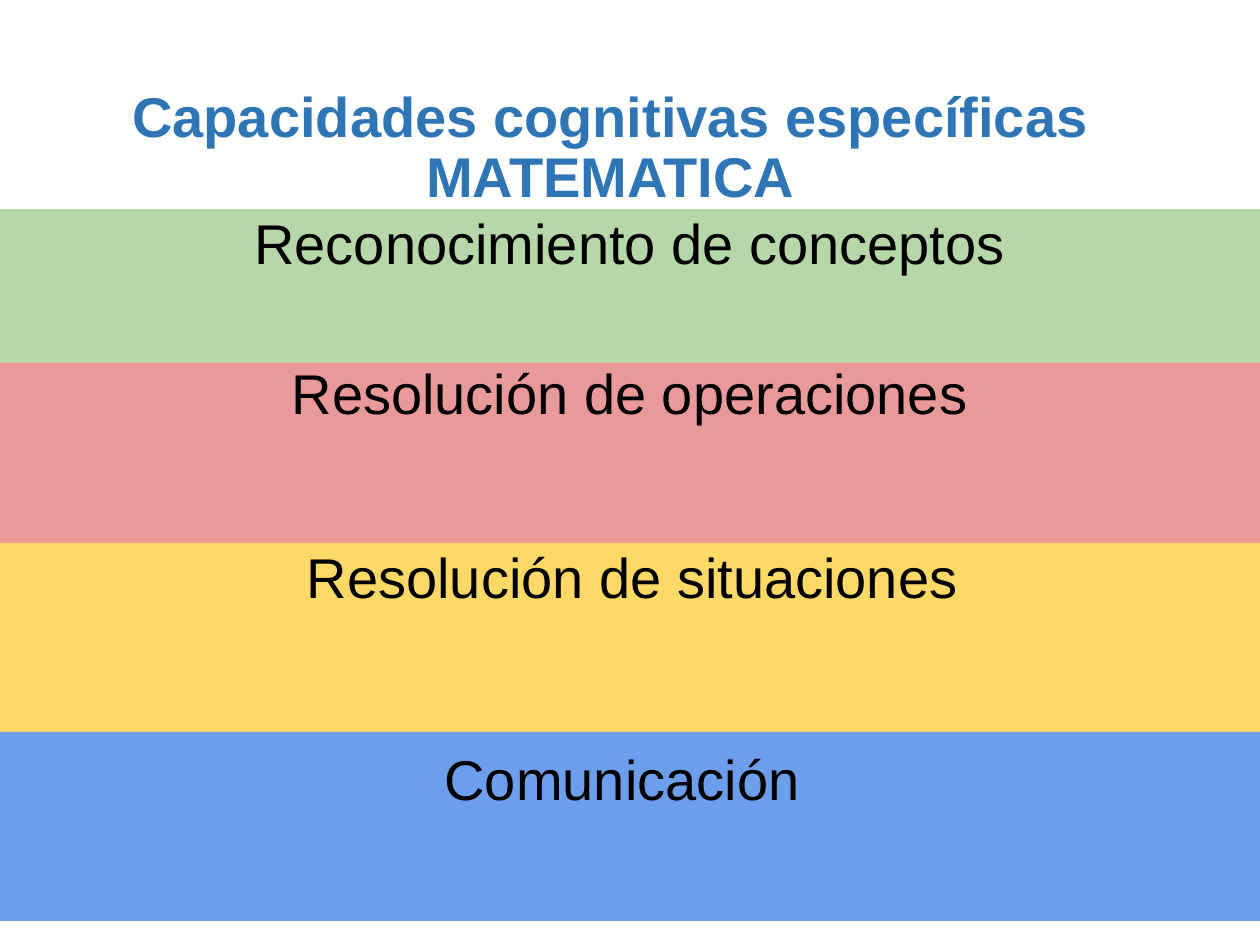
from pptx import Presentation
from pptx.dml.color import RGBColor
from pptx.enum.shapes import MSO_SHAPE
from pptx.enum.text import MSO_ANCHOR, PP_ALIGN
from pptx.util import Pt

RECTANGLE = MSO_SHAPE.RECTANGLE
TOP, MIDDLE = MSO_ANCHOR.TOP, MSO_ANCHOR.MIDDLE
CENTER = PP_ALIGN.CENTER

COLORS = {
    "title": "2E75B6",
    "text": "000000",
    "green": "B6D7A8",
    "red": "EA9999",
    "yellow": "FFD966",
    "blue": "6D9EEB",
}


def write_text(shape, text, color="text", bold=False, anchor=TOP,
               inset=7.2, line_spacing=1.0, space_before=0):
    frame = shape.text_frame
    frame.word_wrap = True
    frame.vertical_anchor = anchor
    frame.margin_left = frame.margin_right = Pt(7.2)
    frame.margin_top = frame.margin_bottom = Pt(inset)
    paragraph = frame.paragraphs[0]
    paragraph.text = text
    paragraph.alignment = CENTER
    paragraph.line_spacing = line_spacing
    paragraph.space_before = Pt(space_before)
    for run in paragraph.runs:
        run.font.name = "Arial"
        run.font.size = Pt(32)
        run.font.bold = bold
        run.font.color.rgb = RGBColor.from_string(COLORS[color])


presentation = Presentation()
presentation.slide_width, presentation.slide_height = Pt(720), Pt(540)
slide = presentation.slides.add_slide(presentation.slide_layouts[6])

title = slide.shapes.add_textbox(Pt(59.8), Pt(56.9), Pt(578.2), Pt(56.9))
write_text(title, "Capacidades cognitivas específicas\vMATEMATICA", color="title",
           bold=True, anchor=MIDDLE, inset=3.6, line_spacing=0.9)

# Back to front: the green and yellow bands overlap the red one.
# text, colour, left, top, width, height, line spacing, space before
bands = [
    ("Resolución de operaciones", "red", -2.2, 205.2, 724.3, 108, 0.8, 5.4),
    ("Reconocimiento de conceptos", "green", 0, 119.5, 720, 87.8, 0.8, 0),
    ("Resolución de situaciones", "yellow", -0.7, 310.3, 724.3, 108, 0.8, 5.4),
    ("Comunicación ", "blue", 0, 418.3, 720, 108, 1.0, 0),
]
for text, fill, left, top, width, height, line_spacing, space_before in bands:
    band = slide.shapes.add_shape(RECTANGLE, Pt(left), Pt(top), Pt(width), Pt(height))
    band.shadow.inherit = False
    band.fill.solid()
    band.fill.fore_color.rgb = RGBColor.from_string(COLORS[fill])
    band.line.fill.background()
    write_text(band, text, line_spacing=line_spacing, space_before=space_before)

presentation.save("out.pptx")
